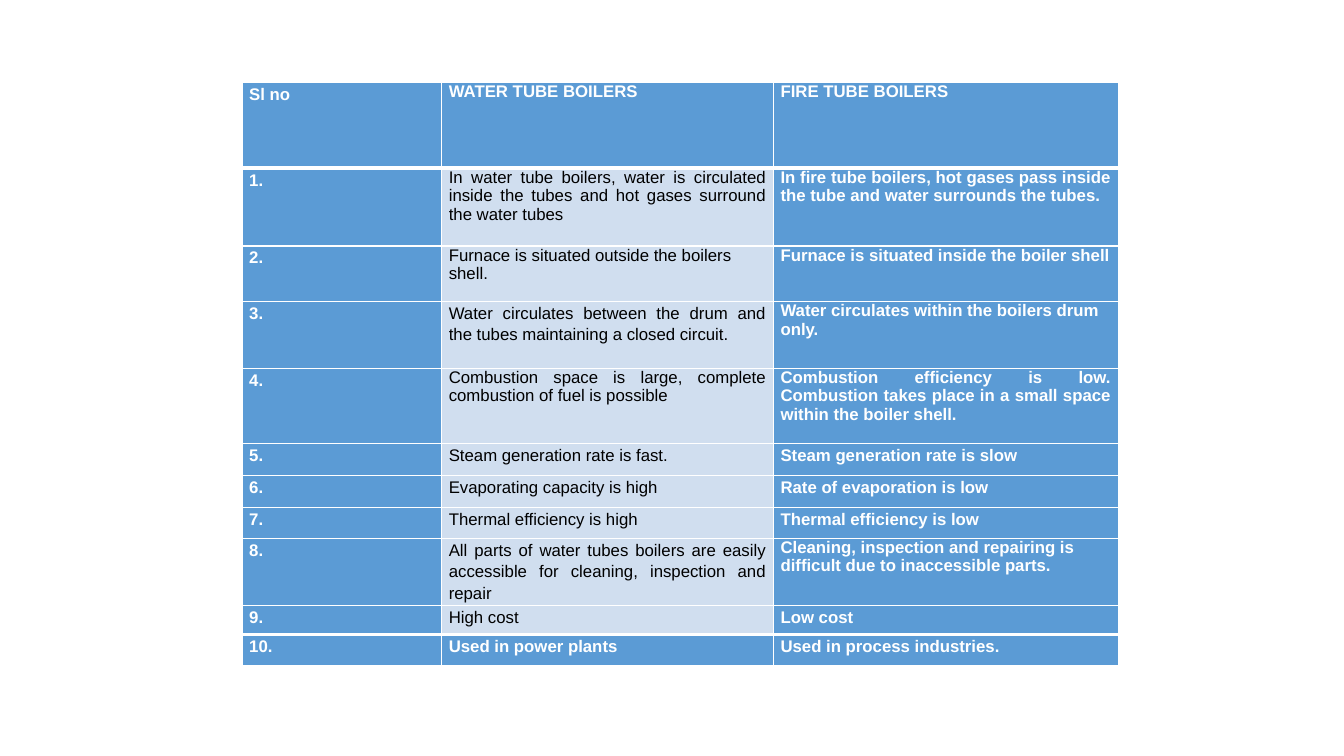
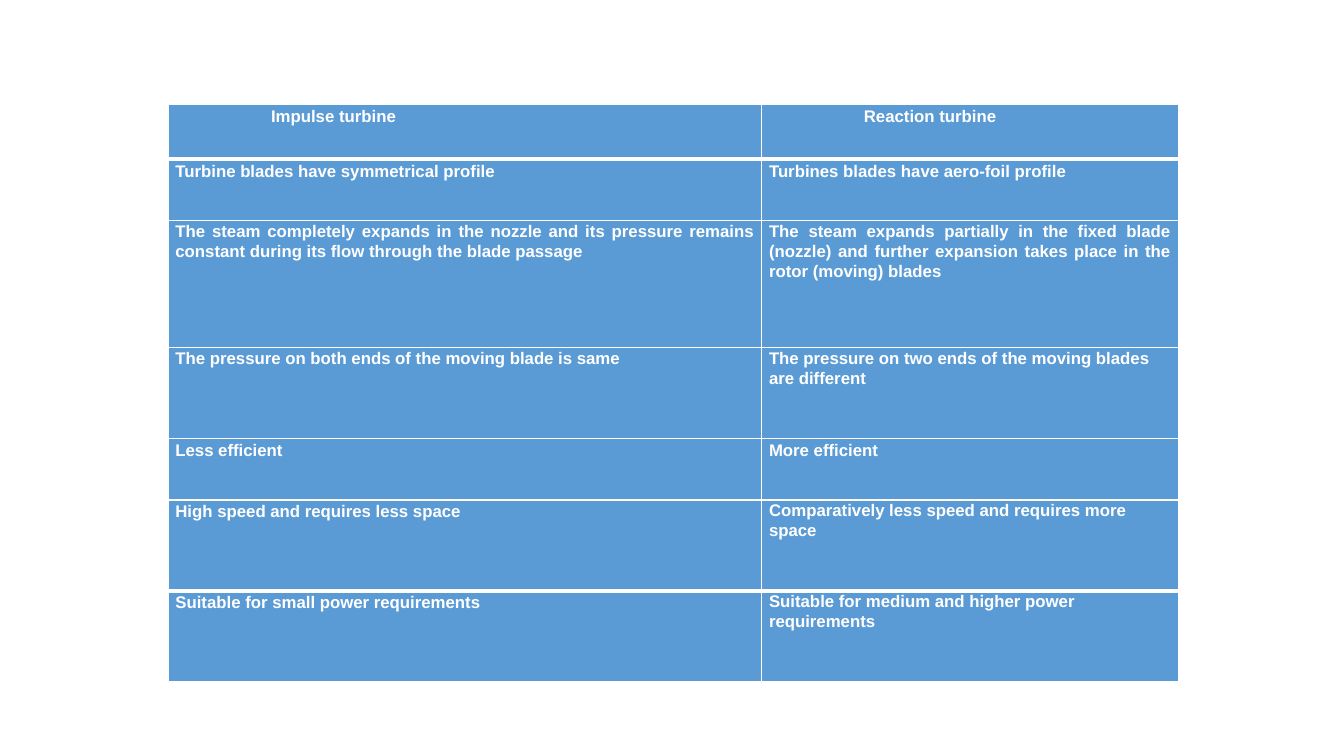
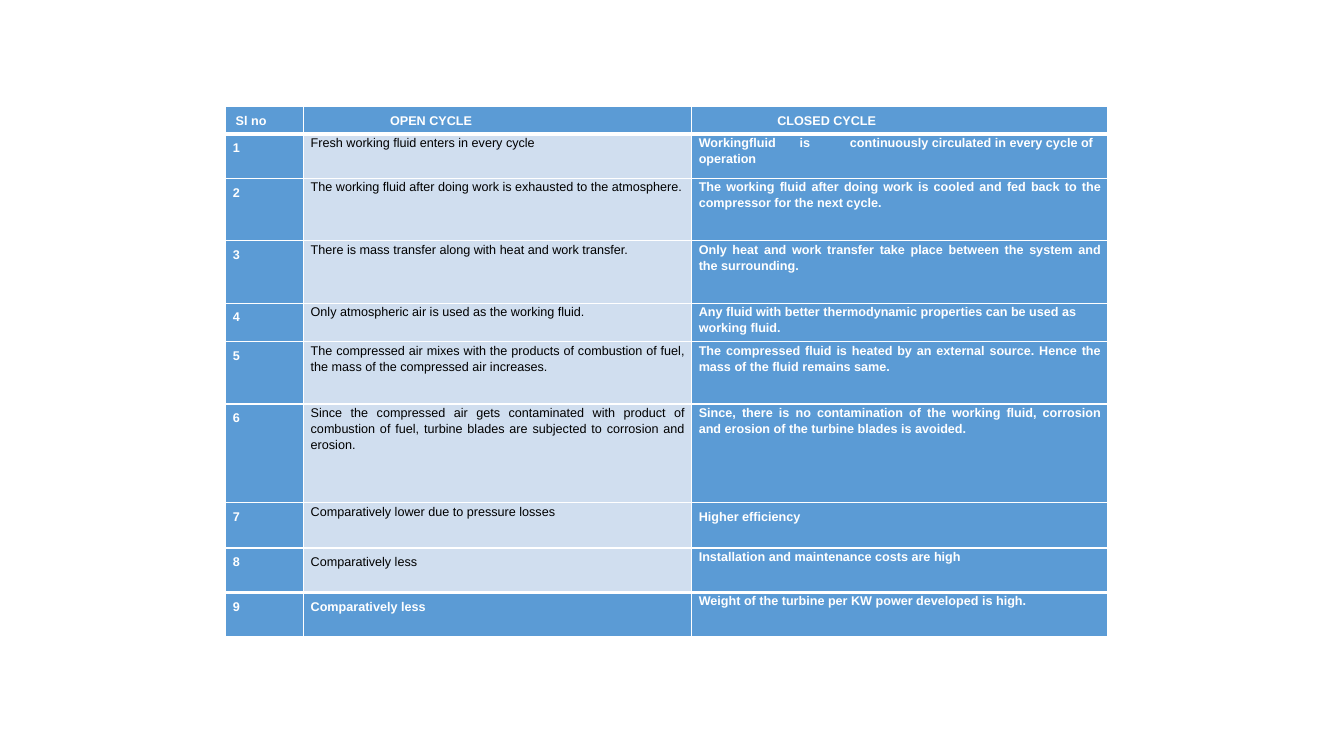
from dataclasses import dataclass

from lxml import etree
from pptx import Presentation
from pptx import util as u
from pptx.dml import color
from pptx.enum import text
from pptx.oxml import ns

COLOURS = {"blue": "5B9BD5", "pale": "D0DEEF", "white": "FFFFFF", "black": "000000"}
LOOSE, MEDIUM, WIDE = 1.14, 1.07, 1.52
EXACT = u.Pt(13.2)
INDENT = 0.18


@dataclass
class Entry:
    words: str
    spacing: object = LOOSE
    justify: bool = False
    indent: float = INDENT


def justified(words, spacing=LOOSE):
    return Entry(words, spacing, justify=True)


def numbered(rows, pattern, spacing):
    return [
        (height, Entry(pattern.format(number), spacing), *entries)
        for number, (height, *entries) in enumerate(rows, 1)
    ]


class ComparisonDeck:
    font = "Arial"
    thin, thick = 1, 3

    def __init__(self):
        self.deck = Presentation()
        self.deck.slide_width = u.Cm(33.87)
        self.deck.slide_height = u.Cm(19.05)
        self.page = None

    def add_page(self):
        self.page = self.deck.slides.add_slide(self.deck.slide_layouts[6])

    def add_border(self, cell, position, side, points):
        line = etree.Element(ns.qn(f"a:ln{side}"), w=str(u.Pt(points)))
        fill = etree.SubElement(line, ns.qn("a:solidFill"))
        etree.SubElement(fill, ns.qn("a:srgbClr"), val=COLOURS["white"])
        cell._tc.get_or_add_tcPr().insert(position, line)

    def fill_cell(self, cell, entry, size, pale, top, bottom):
        cell.margin_left = u.Cm(entry.indent)
        cell.margin_right = u.Cm(INDENT if entry.justify else 0)
        cell.margin_top = cell.margin_bottom = 0
        cell.fill.solid()
        cell.fill.fore_color.rgb = color.RGBColor.from_string(
            COLOURS["pale" if pale else "blue"])
        borders = {"L": self.thin, "R": self.thin, "T": top, "B": bottom}
        for position, (side, points) in enumerate(borders.items()):
            self.add_border(cell, position, side, points)

        para = cell.text_frame.paragraphs[0]
        para.text = entry.words
        para.line_spacing = entry.spacing
        para.alignment = text.PP_ALIGN.JUSTIFY if entry.justify else text.PP_ALIGN.LEFT
        for span in para.runs:
            span.font.name = self.font
            span.font.size = u.Pt(size)
            span.font.bold = not pale
            span.font.color.rgb = color.RGBColor.from_string(
                COLOURS["black" if pale else "white"])

    def add_table(self, left, top, widths, rows, size, pale_column=None):
        heights = [row[0] for row in rows]
        table = self.page.shapes.add_table(
            len(rows), len(widths), u.Cm(left), u.Cm(top),
            u.Cm(sum(widths)), u.Cm(sum(heights))).table
        table.horz_banding = False
        for column, width in zip(table.columns, widths):
            column.width = u.Cm(width)
        last = len(rows) - 1
        for row_index, (height, *entries) in enumerate(rows):
            table.rows[row_index].height = u.Cm(height)
            above = self.thick if row_index in (1, last) else self.thin
            below = self.thick if row_index in (0, last - 1) else self.thin
            for column_index, entry in enumerate(entries):
                pale = column_index == pale_column and 0 < row_index < last
                self.fill_cell(table.cell(row_index, column_index), entry, size,
                               pale, above, below)


def add_boilers(show):
    header = (2.16, Entry("Sl no"), Entry("WATER TUBE BOILERS", EXACT),
              Entry("FIRE TUBE BOILERS", EXACT))
    rows = [
        (1.96,
         justified("In water tube boilers, water is circulated inside the tubes "
                   "and hot gases surround the water tubes", EXACT),
         justified("In fire tube boilers, hot gases pass inside the tube and "
                   "water surrounds the tubes.", EXACT)),
        (1.4, Entry("Furnace is situated outside the boilers shell.", EXACT),
         Entry("Furnace is situated inside the boiler shell", EXACT)),
        (1.68,
         justified("Water circulates between the drum and the tubes maintaining "
                   "a closed circuit."),
         Entry("Water circulates within the boilers drum only.", EXACT)),
        (1.9,
         justified("Combustion space is large, complete combustion of fuel is "
                   "possible", EXACT),
         justified("Combustion efficiency is low. Combustion takes place in a "
                   "small space within the boiler shell.", EXACT)),
        (0.81, Entry("Steam generation rate is fast."),
         Entry("Steam generation rate is slow")),
        (0.79, Entry("Evaporating capacity is high"),
         Entry("Rate of evaporation is low")),
        (0.79, Entry("Thermal efficiency is high"),
         Entry("Thermal efficiency is low")),
        (1.68,
         justified("All parts of water tubes boilers are easily accessible for "
                   "cleaning, inspection and repair"),
         Entry("Cleaning, inspection and repairing is difficult due to "
               "inaccessible parts.", EXACT)),
        (0.74, Entry("High cost"), Entry("Low cost")),
        (0.79, Entry("Used in power plants"), Entry("Used in process industries.")),
    ]
    show.add_page()
    show.add_table(6.1, 2.08, (5.03, 8.36, 8.69),
                   [header, *numbered(rows, "{}.", LOOSE)], 12, pale_column=1)


def add_turbines(show):
    rows = [
        (1.37, Entry("Impulse turbine", indent=2.59),
         Entry("Reaction turbine", indent=2.57)),
        (1.55, Entry("Turbine blades have symmetrical profile"),
         Entry("Turbines blades have aero-foil profile")),
        (3.2,
         justified("The steam completely expands in the nozzle and its pressure "
                   "remains constant during its flow through the blade passage",
                   MEDIUM),
         justified("The steam expands partially in the fixed blade (nozzle) and "
                   "further expansion takes place in the rotor (moving) blades",
                   MEDIUM)),
        (2.29,
         Entry("The pressure on both ends of the moving blade is same", MEDIUM),
         Entry("The pressure on two ends of the moving blades are different",
               MEDIUM)),
        (1.55, Entry("Less efficient"), Entry("More efficient")),
        (2.29, Entry("High speed and requires less space"),
         Entry("Comparatively less speed and requires more space", MEDIUM)),
        (2.29, Entry("Suitable for small power requirements"),
         Entry("Suitable for medium and higher power requirements", MEDIUM)),
    ]
    show.add_page()
    show.add_table(4.24, 2.64, (14.96, 10.49), rows, 12)


def add_cycles(show):
    header = (0.69, Entry("Sl no", WIDE, indent=0.25),
              Entry("OPEN CYCLE", WIDE, indent=2.18),
              Entry("CLOSED CYCLE", WIDE, indent=2.16))
    rows = [
        (1.12, Entry("Fresh working fluid enters in every cycle"),
         Entry("Working\tfluid\tis\tcontinuously circulated in every cycle of "
               "operation")),
        (1.57,
         Entry("The working fluid after doing work is exhausted to the "
               "atmosphere."),
         justified("The working fluid after doing work is cooled and fed back to "
                   "the compressor for the next cycle.")),
        (1.57,
         Entry("There is mass transfer along with heat and work transfer."),
         justified("Only heat and work transfer take place between the system "
                   "and the surrounding.")),
        (0.97, Entry("Only atmospheric air is used as the working fluid."),
         Entry("Any fluid with better thermodynamic properties can be used as "
               "working fluid.")),
        (1.57,
         justified("The compressed air mixes with the products of combustion of "
                   "fuel, the mass of the compressed air increases."),
         justified("The compressed fluid is heated by an external source. Hence "
                   "the mass of the fluid remains same.")),
        (2.49,
         justified("Since the compressed air gets contaminated with product of "
                   "combustion of fuel, turbine blades are subjected to "
                   "corrosion and erosion."),
         justified("Since, there is no contamination of the working fluid, "
                   "corrosion and erosion of the turbine blades is avoided.")),
        (1.14, Entry("Comparatively lower due to pressure losses"),
         Entry("Higher efficiency", WIDE)),
        (1.12, Entry("Comparatively less", WIDE),
         Entry("Installation and maintenance costs are high")),
        (1.12, Entry("Comparatively less", WIDE),
         Entry("Weight of the turbine per KW power developed is high.")),
    ]
    show.add_page()
    show.add_table(5.69, 2.69, (1.96, 9.78, 10.49),
                   [header, *numbered(rows, "{}", WIDE)], 9, pale_column=1)


def main():
    show = ComparisonDeck()
    add_boilers(show)
    add_turbines(show)
    add_cycles(show)
    show.deck.save("out.pptx")


if __name__ == "__main__":
    main()
